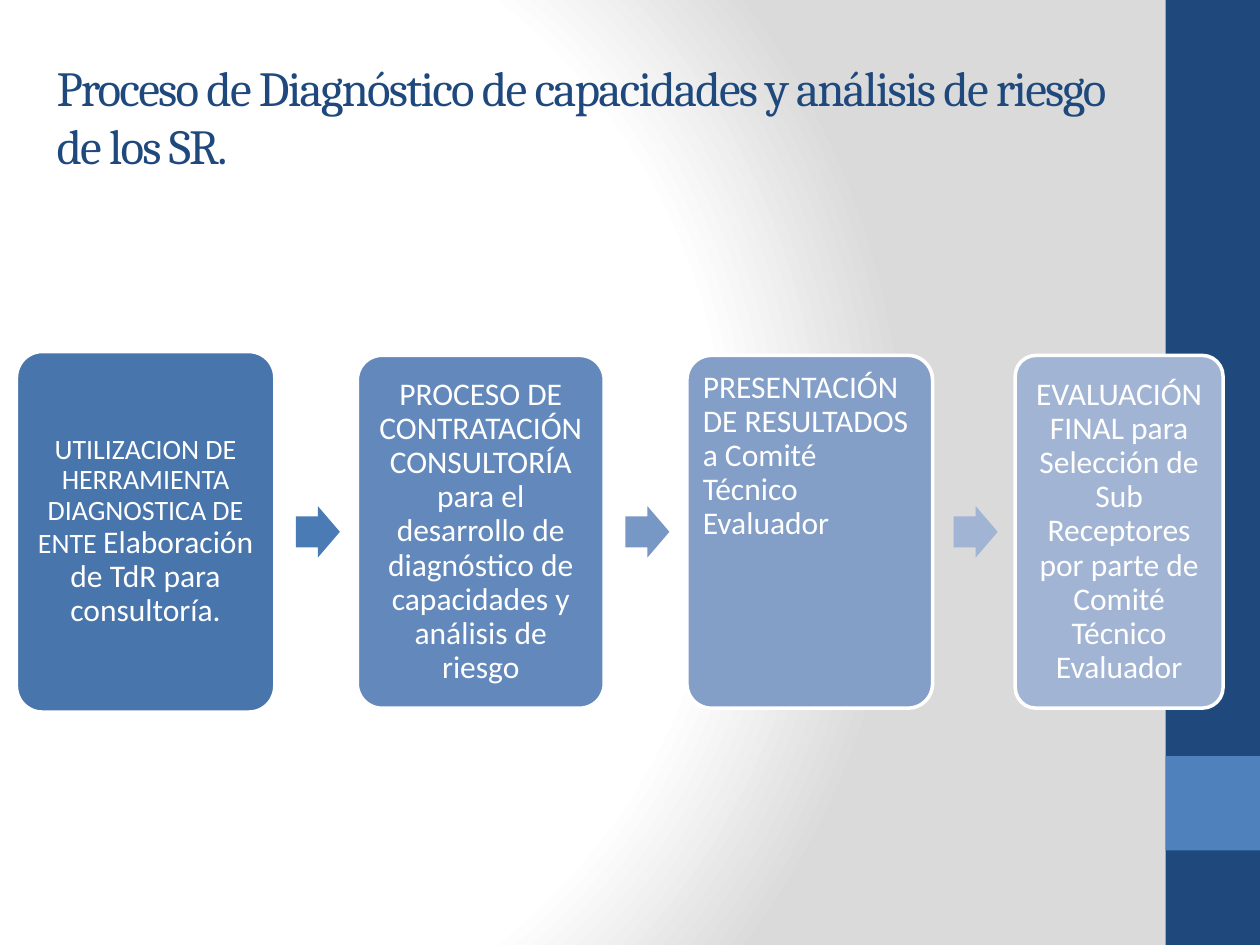
import pptx
import pptx.util
import pptx.dml.color
import pptx.enum.shapes
import pptx.enum.text
import pptx.oxml
import pptx.oxml.ns
from dataclasses import dataclass

Pt = pptx.util.Pt
Kind = pptx.enum.shapes.MSO_SHAPE
Align = pptx.enum.text.PP_ALIGN
Anchor = pptx.enum.text.MSO_ANCHOR


@dataclass(frozen=True)
class Theme:
    navy: str = "1F497D"
    blue: str = "4F81BD"
    white: str = "FFFFFF"
    gray: str = "DADADA"
    head: str = "Cambria"
    body: str = "Calibri"
    title: int = 28
    large: int = 18
    small: int = 16


class Deck:
    def __init__(self, theme, slide):
        self.theme = theme
        self.slide = slide

    def color(self, code):
        return pptx.dml.color.RGBColor.from_string(code)

    def back(self):
        """Circular gradient that stays white for three quarters."""
        stops = [(0, self.theme.white), (75, self.theme.white), (100, self.theme.gray)]
        marks = "".join(
            f'<a:gs pos="{pos * 1000}"><a:srgbClr val="{code}"/></a:gs>'
            for pos, code in stops)
        grad = pptx.oxml.parse_xml(
            f'<a:gradFill {pptx.oxml.ns.nsdecls("a")} rotWithShape="1">'
            f'<a:gsLst>{marks}</a:gsLst><a:path path="circle">'
            '<a:fillToRect l="20000" t="50000" r="100000" b="50000"/>'
            '</a:path></a:gradFill>')
        self.slide.background.fill.solid()
        tag = pptx.oxml.ns.qn("a:solidFill")
        old = next(self.slide.element.iter(tag))
        old.getparent().replace(old, grad)

    def shape(self, kind, left, top, wide, high, fill, adjust=()):
        item = self.slide.shapes.add_shape(kind, Pt(left), Pt(top), Pt(wide), Pt(high))
        item.shadow.inherit = False
        item.fill.solid()
        item.fill.fore_color.rgb = self.color(fill)
        item.line.fill.background()
        for i, value in enumerate(adjust):
            item.adjustments[i] = value
        return item

    def run(self, para, text, size, face, code):
        part = para.add_run()
        part.text = text
        part.font.size = Pt(size)
        part.font.name = face
        part.font.color.rgb = self.color(code)
        return part

    def title(self, text, left, top, wide, high):
        box = self.slide.shapes.add_textbox(Pt(left), Pt(top), Pt(wide), Pt(high))
        frame = box.text_frame
        frame.word_wrap = True
        frame.vertical_anchor = Anchor.MIDDLE
        look = self.theme
        part = self.run(frame.paragraphs[0], text, look.title, look.head, look.navy)
        part.font._element.set("spc", "-100")

    def card(self, left, mid, wide, high, fill, runs, align, anchor):
        item = self.shape(Kind.ROUNDED_RECTANGLE, left, mid - high / 2,
                          wide, high, fill, [0.1])
        item.line.color.rgb = self.color(self.theme.white)
        item.line.width = Pt(2)
        frame = item.text_frame
        frame.word_wrap = True
        frame.vertical_anchor = anchor
        frame.margin_left = frame.margin_right = Pt(5)
        frame.margin_top = frame.margin_bottom = Pt(5)
        para = frame.paragraphs[0]
        para.alignment = align
        para.line_spacing = 0.9
        for text, size in runs:
            self.run(para, text, size, self.theme.body, self.theme.white)

    def arrow(self, left, mid, wide, high, fill):
        self.shape(Kind.RIGHT_ARROW, left, mid - high / 2, wide, high, fill, [0.6, 0.5])


def main():
    show = pptx.Presentation()
    show.slide_width, show.slide_height = Pt(720), Pt(540)
    look = Theme()
    deck = Deck(look, show.slides.add_slide(show.slide_layouts[6]))

    # Background and side band
    deck.back()
    deck.shape(Kind.RECTANGLE, 666, 0, 54, 540, look.navy)
    deck.shape(Kind.RECTANGLE, 666, 432, 54, 54, look.blue)

    # Title
    deck.title("Proceso de Diagnóstico de capacidades y análisis de riesgo de los SR.",
               25.2, 20.9, 622, 90.7)

    # Process steps: width, height, fill, arrow fill, runs, alignment, anchor
    center = (Align.CENTER, Anchor.MIDDLE)
    steps = [
        (147.6, 206, "4875AC", "4B7BB5",
         [("UTILIZACION DE HERRAMIENTA DIAGNOSTICA DE ENTE ", look.small),
          ("Elaboración de TdR para consultoría.", look.large)], center),
        (141.1, 201.6, "6389BC", "7797C4",
         [("PROCESO DE CONTRATACIÓN CONSULTORÍA para el desarrollo de diagnóstico "
           "de capacidades y análisis de riesgo", look.large)], center),
        (140.4, 201.6, "839EC7", "A1B4D4",
         [("PRESENTACIÓN DE RESULTADOS a Comité Técnico Evaluador", look.large)],
         (Align.LEFT, Anchor.TOP)),
        (118.8, 201.6, "A2B4D4", None,
         [("EVALUACIÓN FINAL para Selección de Sub Receptores por parte de "
           "Comité Técnico Evaluador", look.large)], center),
    ]
    left, mid, gap = 9.4, 303.9, 47.2
    for wide, high, fill, tint, runs, place in steps:
        deck.card(left, mid, wide, high, fill, runs, *place)
        left += wide
        if tint:
            deck.arrow(left + 12, mid, 25.2, 29.5, tint)
        left += gap

    show.save("out.pptx")


if __name__ == "__main__":
    main()
